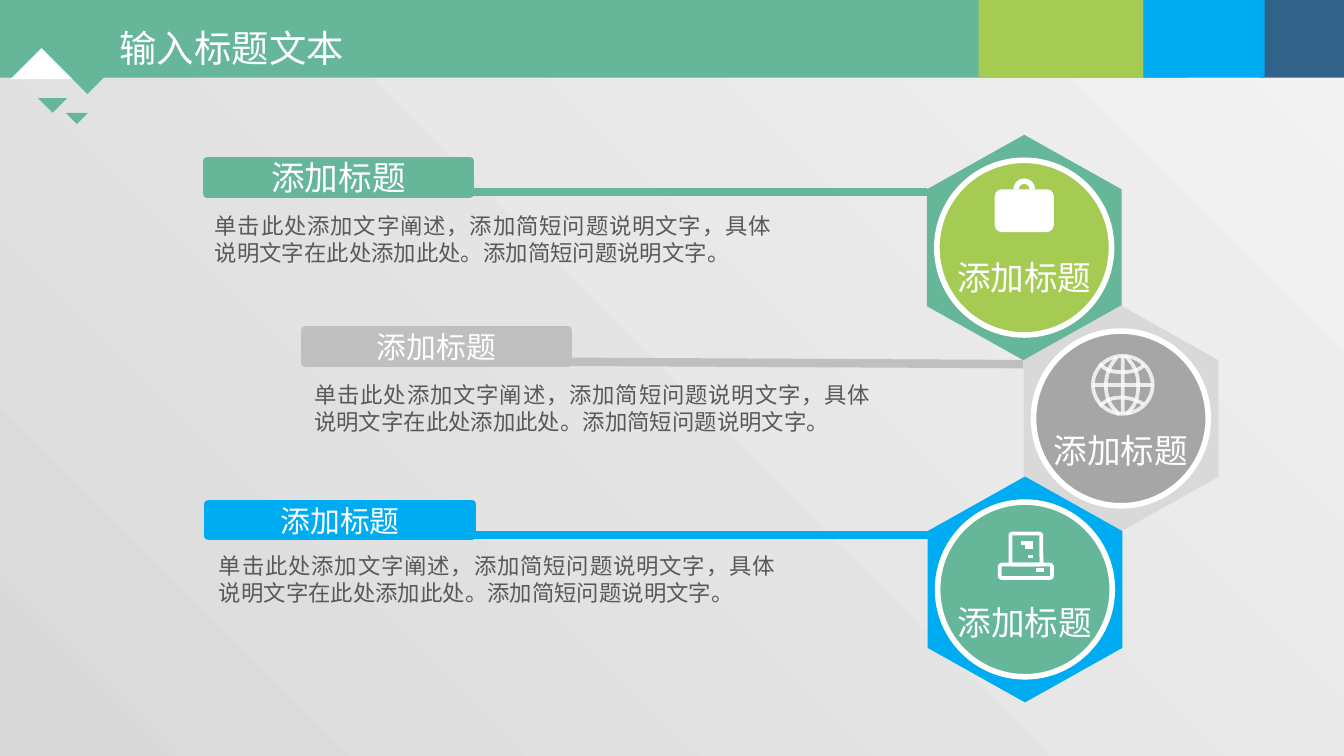
from lxml.etree import SubElement
from pptx import Presentation
from pptx.dml.color import RGBColor
from pptx.enum.shapes import MSO_CONNECTOR as Connector, MSO_SHAPE as Shape
from pptx.enum.text import MSO_ANCHOR as Anchor, MSO_AUTO_SIZE as AutoSize, PP_ALIGN as Align
from pptx.oxml.ns import qn
from pptx.util import Pt

FONT = "Noto Sans CJK SC"
WHITE = RGBColor(0xFF, 0xFF, 0xFF)
GREEN = RGBColor(0x66, 0xB6, 0x99)
LIME = RGBColor(0xA5, 0xCB, 0x52)
BLUE = RGBColor(0x00, 0xAC, 0xF1)
NAVY = RGBColor(0x31, 0x62, 0x8A)
PALE_GRAY = RGBColor(0xD9, 0xD9, 0xD9)
SILVER = RGBColor(0xBF, 0xBF, 0xBF)
MID_GRAY = RGBColor(0xA6, 0xA6, 0xA6)
NEAR_WHITE = RGBColor(0xF2, 0xF2, 0xF2)
BODY_GRAY = RGBColor(0x59, 0x59, 0x59)

HEADING = "添加标题"
DETAIL = "单击此处添加文字阐述，添加简短问题说明文字，具体说明文字在此处添加此处。添加简短问题说明文字。"
HEX_WIDTH, HEX_HEIGHT = 104.4, 121
GLOBE_ARCS = [
    [(1.8, -15.5), (4, -11.9), (8.3, -9), (8.3, 0.4), (8.3, 9.7), (4.7, 13.3), (1.8, 15.5)],
    [(-3.2, -14.8), (-4.7, -12.6), (-9, -8.3), (-9, 0.4), (-9, 9.7), (-4.7, 12.6), (-1.8, 16.2)],
    [(11.2, -10.4), (9.7, -9), (6.8, -6.8), (-0.4, -6.8), (-7.6, -6.8), (-9.7, -9), (-12.6, -11.2)],
    [(11.2, 10.4), (9.7, 9.7), (6.1, 6.8), (-1.1, 6.8), (-8.3, 6.8), (-9.7, 9.7), (-12.6, 11.2)],
]


def write(frame, text, size, color=WHITE, align=Align.CENTER, anchor=Anchor.TOP,
          wrap=True, inset=None, spacing=None):
    frame.auto_size = AutoSize.NONE
    frame.word_wrap = wrap
    frame.vertical_anchor = anchor
    if inset is not None:
        frame.margin_left = frame.margin_right = Pt(inset)
        frame.margin_top = frame.margin_bottom = Pt(inset)
    paragraph = frame.paragraphs[0]
    paragraph.alignment = align
    paragraph.line_spacing = spacing
    run = paragraph.add_run()
    run.text = text
    run.font.size = Pt(size)
    run.font.color.rgb = color
    run.font.name = FONT
    SubElement(run.font._element, qn("a:ea"), typeface=FONT)


def stroke(line, color, width, opacity=None):
    line.color.rgb = color
    line.width = Pt(width)
    if opacity:
        for tint in line._ln.iter(qn("a:srgbClr")):
            SubElement(tint, qn("a:alpha"), val=str(opacity * 1000))


def paint(shape, fill, line, width, opacity):
    shape.shadow.inherit = False
    if fill is None:
        shape.fill.background()
    else:
        shape.fill.solid()
        shape.fill.fore_color.rgb = fill
    if line is None:
        shape.line.fill.background()
    else:
        stroke(shape.line, line, width, opacity)
    return shape


def draw(slide, kind, left, top, width, height, fill=None, line=None, weight=2, opacity=None):
    shape = slide.shapes.add_shape(kind, Pt(left), Pt(top), Pt(width), Pt(height))
    return paint(shape, fill, line, weight, opacity)


def outline(slide, points, fill=None, line=None, weight=2, opacity=None):
    corners = [(Pt(x), Pt(y)) for x, y in points]
    builder = slide.shapes.build_freeform(*corners[0])
    builder.add_line_segments(corners[1:], close=fill is not None)
    return paint(builder.convert_to_shape(), fill, line, weight, opacity)


def connect(slide, x1, y1, x2, y2, color=WHITE, weight=2, opacity=None):
    rule = slide.shapes.add_connector(Connector.STRAIGHT, Pt(x1), Pt(y1), Pt(x2), Pt(y2))
    stroke(rule.line, color, weight, opacity)
    SubElement(rule._element.spPr, qn("a:effectLst"))


def bezier(controls, steps=10):
    points = [controls[0]]
    for first in range(0, len(controls) - 1, 3):
        a, b, c, d = controls[first:first + 4]
        for step in range(1, steps + 1):
            t = step / steps
            u = 1 - t
            points.append(tuple(
                u ** 3 * p + 3 * u * u * t * q + 3 * u * t * t * r + t ** 3 * s
                for p, q, r, s in zip(a, b, c, d)))
    return points


def header(slide, width, height):
    for left, right, color in [(0, 636.5, GREEN), (675, width, NAVY),
                               (612.5, 677.5, BLUE), (524.3, 612.5, LIME)]:
        draw(slide, Shape.RECTANGLE, left, 0, right - left, height, color)
    title = slide.shapes.title
    title.left, title.top, title.width, title.height = Pt(64), Pt(6.5), Pt(137), Pt(31.7)
    write(title.text_frame, "输入标题文本", 20, align=Align.LEFT, inset=0, spacing=1.3)
    title.element.getparent().append(title.element)
    for x, base, rise, color in [(46.8, 38.2, 12.2, GREEN), (41.2, 60.5, 6, GREEN),
                                 (22.3, 42.4, -16.6, WHITE), (28.2, 52.6, 7.8, GREEN)]:
        outline(slide, [(x - rise, base), (x + rise, base), (x, base + rise)], color)


def banner(slide, left, top, end, color, size, start=83, slope=0):
    connect(slide, left + start, top + 16.6, end, top + 16.6 + slope, color, 4.5)
    bar = draw(slide, Shape.RECTANGLE, left, top, 141, 17.3, color, color, 4.5)
    write(bar.text_frame, HEADING, size, anchor=Anchor.MIDDLE)


def detail(slide, left, top):
    box = slide.shapes.add_textbox(Pt(left), Pt(top), Pt(312.5), Pt(36))
    write(box.text_frame, DETAIL, 12, BODY_GRAY, Align.JUSTIFY)


def briefcase(slide, x, y):
    draw(slide, Shape.ROUNDED_RECTANGLE, x - 15.8, y - 31.3, 31.7, 23, WHITE)
    draw(slide, Shape.BLOCK_ARC, x - 5.8, y - 37.1, 11.6, 11.6, WHITE)


def globe(slide, x, y):
    x, y = x + 1, y - 18
    draw(slide, Shape.OVAL, x - 16, y - 15.5, 32, 31, line=WHITE, opacity=78)
    connect(slide, x, y - 15.5, x, y + 15.5, opacity=78)
    connect(slide, x - 16, y, x + 16, y, opacity=78)
    for arc in GLOBE_ARCS:
        outline(slide, [(x + dx, y + dy) for dx, dy in bezier(arc)], line=WHITE, opacity=78)


def computer(slide, x, y):
    screen = draw(slide, Shape.ROUNDED_RECTANGLE, x - 7.8, y - 29.9, 16.6, 16.6, line=WHITE)
    screen.adjustments[0] = 0.06
    draw(slide, Shape.ROUNDED_RECTANGLE, x - 13.5, y - 13.3, 28, 7.2, line=WHITE)
    for right, left, dy in [(10.2, 5.9, -10.4), (4.5, -2, -24.8),
                            (4.5, 0.2, -22.7), (4.5, 1.6, -17.6)]:
        connect(slide, x + right, y + dy, x + left, y + dy)


def badge(slide, x, y, color, disc, icon, label_drop):
    hexagon = draw(slide, Shape.HEXAGON, x - HEX_HEIGHT / 2, y - HEX_WIDTH / 2,
                   HEX_HEIGHT, HEX_WIDTH, color)
    hexagon.adjustments[0] = 0.28
    hexagon.rotation = 270
    draw(slide, Shape.OVAL, x - 46.8, y - 46.8, 93.6, 93.6, disc, WHITE, 3)
    label = slide.shapes.add_textbox(Pt(x - 43.5), Pt(y + label_drop), Pt(87), Pt(28.8))
    write(label.text_frame, HEADING, 18, wrap=False)
    icon(slide, x, y)


def main():
    deck = Presentation()
    deck.slide_width, deck.slide_height = Pt(720), Pt(405)
    slide = deck.slides.add_slide(deck.slide_layouts[5])
    backdrop = slide.background.fill
    backdrop.gradient()
    backdrop.gradient_angle = 45
    for stop, color in zip(backdrop.gradient_stops, (PALE_GRAY, NEAR_WHITE)):
        stop.color.rgb = color
    header(slide, 720, 41.6)

    edge = HEX_WIDTH / 2
    badge(slide, 548.7, 132.7, GREEN, LIME, briefcase, 1.2)
    banner(slide, 163.4, 177.1, 600.5 - edge, SILVER, 16, start=117.4, slope=1.4)
    badge(slide, 600.5, 224.2, PALE_GRAY, MID_GRAY, globe, 2.6)
    banner(slide, 111.8, 270, 549.1 - edge, BLUE, 16)
    badge(slide, 549.1, 315.8, BLUE, GREEN, computer, 3.2)
    banner(slide, 110.9, 86.4, 548.7 - edge, GREEN, 18)
    for left, top in [(108, 110.2), (161.3, 200.9), (110.2, 292.3)]:
        detail(slide, left, top)
    deck.save("out.pptx")


if __name__ == "__main__":
    main()
